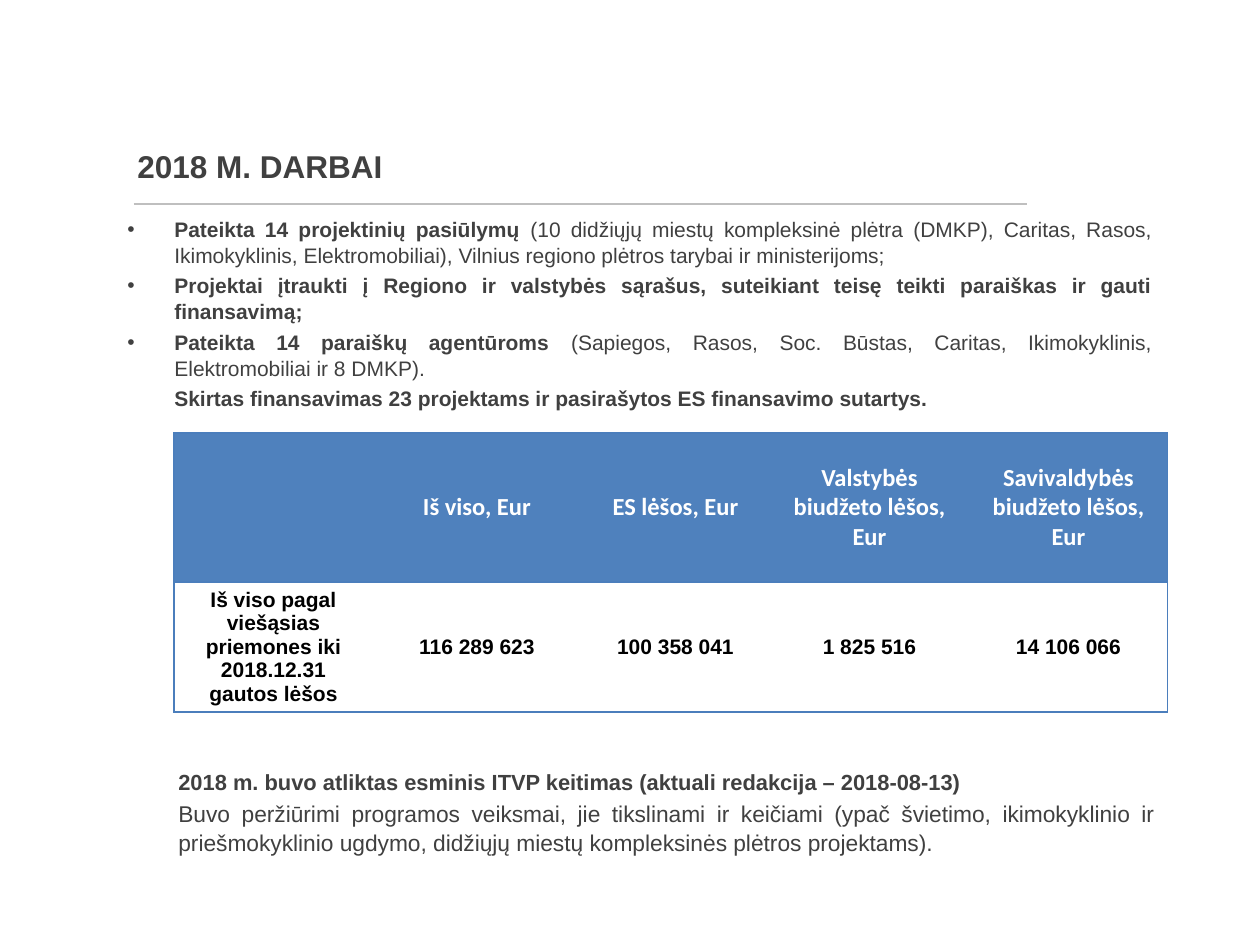
"""Builds the slide on the 2018 works: submitted projects, funding table and programme change."""
import pptx
import pptx.util
import pptx.dml.color
import pptx.enum.shapes
import pptx.enum.text
import pptx.oxml.ns
import lxml.etree
from dataclasses import dataclass


@dataclass(frozen=True)
class Theme:
    text: str = "404040"
    rule: str = "BFBFBF"
    header: str = "4F81BD"
    border: str = "4B7EBC"
    white: str = "FFFFFF"
    black: str = "000000"
    font: str = "Arial"
    header_font: str = "Calibri"
    title: float = 18
    body: float = 12
    header_size: float = 14
    note_heading: float = 12.5
    note: float = 13


THEME = Theme()
PX = 914400 / 126
qn = pptx.oxml.ns.qn
RGB = pptx.dml.color.RGBColor.from_string
ALIGN = pptx.enum.text.PP_ALIGN
MIDDLE = pptx.enum.text.MSO_ANCHOR.MIDDLE


def px(*lengths):
    return [pptx.util.Emu(round(length * PX)) for length in lengths]


def write(paragraph, parts, size, align, color=THEME.text, font=THEME.font):
    paragraph.alignment = align
    for wording, bold in parts:
        run = paragraph.add_run()
        run.text = wording
        run.font.size = pptx.util.Pt(size)
        run.font.name = font
        run.font.bold = bold
        run.font.color.rgb = RGB(color)


deck = pptx.Presentation()
deck.slide_width, deck.slide_height = px(1260, 945)
slide = deck.slides.add_slide(deck.slide_layouts[6])

heading = slide.shapes.add_textbox(*px(125, 86, 1091, 159)).text_frame
heading.word_wrap = True
heading.vertical_anchor = MIDDLE
write(heading.paragraphs[0], [("2018 M. DARBAI", True)], THEME.title, ALIGN.LEFT)

rule = slide.shapes.add_connector(pptx.enum.shapes.MSO_CONNECTOR.STRAIGHT, *px(134, 204, 1027, 204))
rule.line.color.rgb = RGB(THEME.rule)
rule.line.width = pptx.util.Pt(1.5)
lxml.etree.SubElement(rule._element.spPr, qn("a:effectLst"))

works = [
    (True, [("Pateikta 14 projektinių pasiūlymų ", True),
            ("(10 didžiųjų miestų kompleksinė plėtra (DMKP), Caritas, Rasos, Ikimokyklinis, "
             "Elektromobiliai), Vilnius regiono plėtros tarybai ir ministerijoms;", False)]),
    (True, [("Projektai įtraukti į Regiono ir valstybės sąrašus, suteikiant teisę teikti "
             "paraiškas ir gauti finansavimą;", True)]),
    (True, [("Pateikta 14 paraiškų agentūroms ", True),
            ("(Sapiegos, Rasos, Soc. Būstas, Caritas, Ikimokyklinis, Elektromobiliai "
             "ir 8 DMKP).", False)]),
    (False, [("Skirtas finansavimas 23 projektams ir pasirašytos ES finansavimo sutartys.", True)]),
]
works_frame = slide.shapes.add_textbox(*px(115, 209, 1050, 209)).text_frame
works_frame.word_wrap = True
indent = px(47)[0]
for index, (bulleted, parts) in enumerate(works):
    paragraph = works_frame.add_paragraph() if index else works_frame.paragraphs[0]
    properties = paragraph._p.get_or_add_pPr()
    properties.set("marL", str(indent))
    properties.set("indent", str(-indent if bulleted else 0))
    if bulleted:
        lxml.etree.SubElement(properties, qn("a:buFont")).set("typeface", THEME.font)
        lxml.etree.SubElement(properties, qn("a:buChar")).set("char", "•")
    paragraph.line_spacing = 1.04
    paragraph.space_before = pptx.util.Pt(2.4 if index else 0)
    write(paragraph, parts, THEME.body, ALIGN.JUSTIFY)

funding = [
    ["", "Iš viso, Eur", "ES lėšos, Eur", "Valstybės biudžeto lėšos, Eur",
     "Savivaldybės biudžeto lėšos, Eur"],
    ["Iš viso pagal viešąsias priemones iki 2018.12.31 gautos lėšos",
     "116 289 623", "100 358 041", "1 825 516", "14 106 066"],
]
column_widths = px(199, 208, 189, 199, 199)
row_heights = px(149, 130)
table = slide.shapes.add_table(2, 5, *px(174, 433, 994, 279)).table
table._tbl.tblPr.find(qn("a:tableStyleId")).text = "{2D5ABB26-0587-4C30-8999-92F81FD0307C}"
table.horz_banding = False
for column, width in zip(table.columns, column_widths):
    column.width = width
for row, height in zip(table.rows, row_heights):
    row.height = height

for r, labels in enumerate(funding):
    is_header = r == 0
    for c, label in enumerate(labels):
        cell = table.cell(r, c)
        cell.vertical_anchor = MIDDLE
        cell.fill.solid()
        cell.fill.fore_color.rgb = RGB(THEME.header if is_header else THEME.white)
        if not is_header:
            cell.margin_top, cell.margin_bottom = px(1, 1)
        if label:
            write(cell.text_frame.paragraphs[0], [(label, True)],
                  THEME.header_size if is_header else THEME.body, ALIGN.CENTER,
                  THEME.white if is_header else THEME.black,
                  THEME.header_font if is_header else THEME.font)
        sides = [("a:lnL", c == 0), ("a:lnR", c == 4), ("a:lnT", True), ("a:lnB", r == 1)]
        edges = [side for side, drawn in sides if drawn]
        for position, side in enumerate(edges):
            edge = lxml.etree.Element(qn(side), w=str(pptx.util.Pt(0.75)))
            paint = lxml.etree.SubElement(edge, qn("a:solidFill"))
            lxml.etree.SubElement(paint, qn("a:srgbClr")).set("val", THEME.border)
            cell._tc.get_or_add_tcPr().insert(position, edge)

changes = [
    ("2018 m. buvo atliktas esminis ITVP keitimas (aktuali redakcija – 2018-08-13)",
     True, THEME.note_heading),
    ("Buvo peržiūrimi programos veiksmai, jie tikslinami ir keičiami (ypač švietimo, "
     "ikimokyklinio ir priešmokyklinio ugdymo, didžiųjų miestų kompleksinės plėtros "
     "projektams).", False, THEME.note),
]
changes_frame = slide.shapes.add_textbox(*px(166, 761, 1000, 169)).text_frame
changes_frame.word_wrap = True
for index, (wording, bold, size) in enumerate(changes):
    paragraph = changes_frame.add_paragraph() if index else changes_frame.paragraphs[0]
    paragraph.line_spacing = 1.04
    paragraph.space_before = pptx.util.Pt(2.6 if index else 0)
    write(paragraph, [(wording, bold)], size, ALIGN.JUSTIFY)

deck.save("out.pptx")
